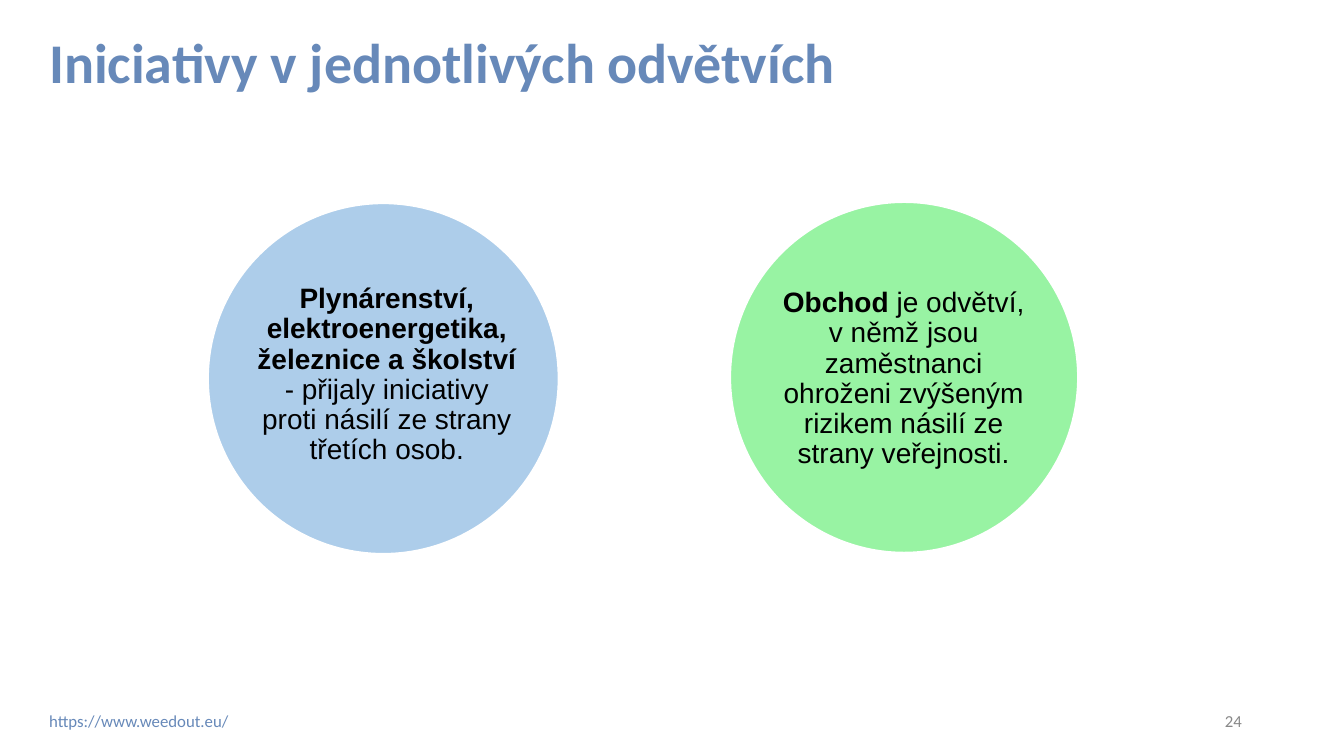
from lxml import etree
from pptx import Presentation
from pptx.dml.color import RGBColor
from pptx.enum.shapes import MSO_SHAPE as Shape
from pptx.enum.text import MSO_ANCHOR as Anchor, PP_ALIGN as Align
from pptx.oxml.ns import qn
from pptx.util import Cm, Pt

# Content: runs are (text, bold); frames are left, top, width, height in cm
TITLE = "Iniciativy v jednotlivých odvětvích"
SITE = "https://www.weedout.eu/"
PAGE_NUMBER = "24"
SECTORS = [
    {"fill": "2EE844", "circle": (18.39, 5.08, 8.79, 8.86),
     "label": (19.69, 6.48, 6.17, 6.15),
     "runs": [("Obchod", True),
              (" je odvětví, v němž jsou zaměstnanci ohroženi zvýšeným "
               "rizikem násilí ze strany veřejnosti.", False)]},
    {"fill": "5999D5", "circle": (5.23, 5.11, 8.86, 8.86),
     "label": (6.45, 5.66, 6.6, 7.59),
     "runs": [("Plynárenství, elektroenergetika, železnice a školství ", True),
              ("- přijaly iniciativy proti násilí ze strany třetích osob.", False)]},
]
BLUE, GREY, BLACK, WHITE = "6789B9", "888888", "000000", "FFFFFF"
OPACITY = 49
LEFT_MARGIN = 0.99


def colour(value):
    return RGBColor.from_string(value)


def add_text(page, frame, runs, size, font, ink, align=Align.LEFT,
             anchor=Anchor.TOP, spacing=1.0, insets=(0.25, 0.13)):
    box = page.shapes.add_textbox(*map(Cm, frame))
    text = box.text_frame
    text.word_wrap = True
    text.vertical_anchor = anchor
    text.margin_left = text.margin_right = Cm(insets[0])
    text.margin_top = text.margin_bottom = Cm(insets[1])
    para = text.paragraphs[0]
    para.alignment = align
    para.line_spacing = spacing
    for words, bold in runs:
        span = para.add_run()
        span.text = words
        span.font.name = font
        span.font.size = Pt(size)
        span.font.bold = bold
        span.font.color.rgb = colour(ink)


def add_circle(page, frame, fill):
    circle = page.shapes.add_shape(Shape.OVAL, *map(Cm, frame))
    circle.shadow.inherit = False
    circle.fill.solid()
    circle.fill.fore_color.rgb = colour(fill)
    tint = circle.fill._xPr.find(qn("a:solidFill"))[0]
    etree.SubElement(tint, qn("a:alpha")).set("val", str(OPACITY * 1000))
    circle.line.color.rgb = colour(WHITE)
    circle.line.width = Pt(2)


def main():
    deck = Presentation()
    deck.slide_width, deck.slide_height = Cm(33.87), Cm(19.05)
    page = deck.slides.add_slide(deck.slide_layouts[6])

    # Title
    add_text(page, (LEFT_MARGIN, 0.76, 28.19, 1.7), [(TITLE, True)],
             40, "Calibri", BLUE, spacing=0.9)

    # Circles with their labels
    for sector in SECTORS:
        add_circle(page, sector["circle"], sector["fill"])
        add_text(page, sector["label"], sector["runs"], 20, "Arial", BLACK,
                 Align.CENTER, Anchor.MIDDLE, spacing=0.9, insets=(0, 0))

    # Footer
    add_text(page, (23.93, 17.65, 7.62, 1.02), [(PAGE_NUMBER, False)],
             12, "Calibri", GREY, Align.RIGHT, Anchor.MIDDLE)
    add_text(page, (LEFT_MARGIN, 17.78, 7.59, 0.76), [(SITE, False)],
             12, "Calibri", BLUE)

    deck.save("out.pptx")


if __name__ == "__main__":
    main()
